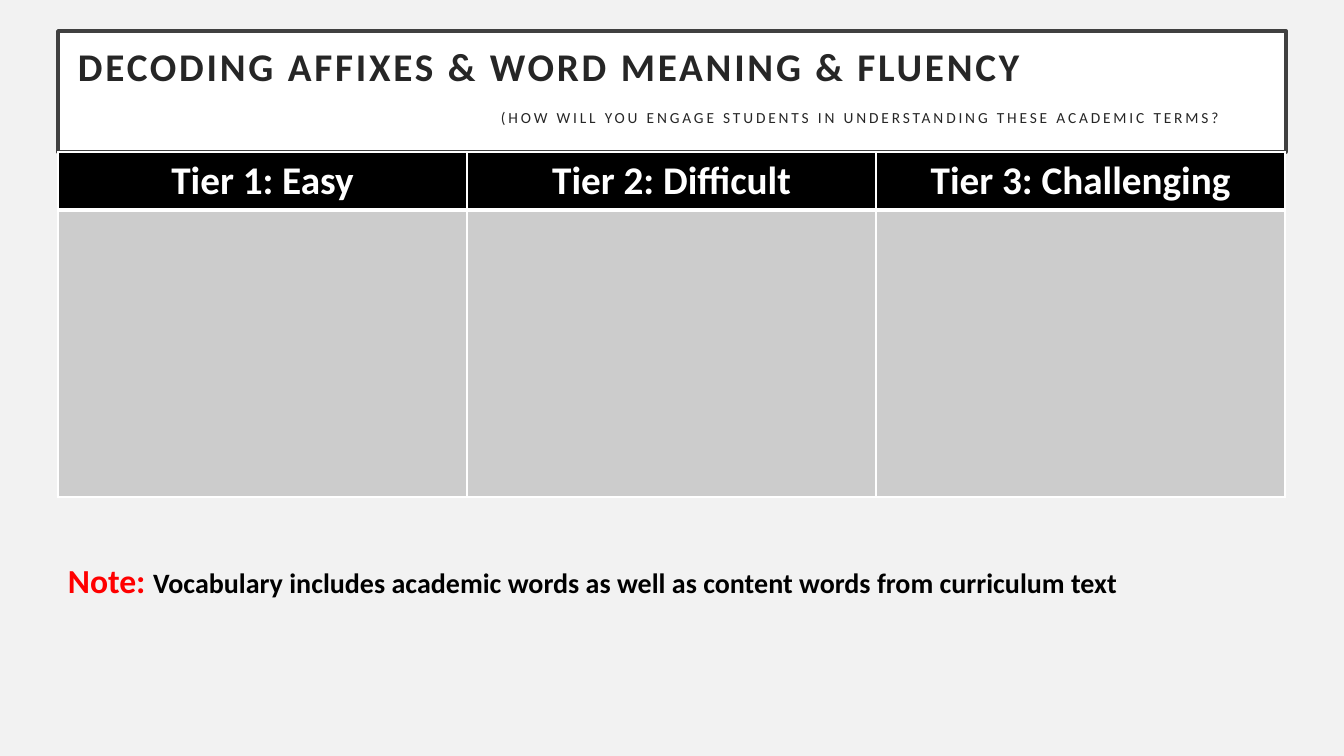
import dataclasses

import pptx
import pptx.dml.color
import pptx.enum.shapes
import pptx.enum.text
import pptx.oxml
import pptx.oxml.ns
import pptx.util


@dataclasses.dataclass(frozen=True)
class Theme:
    font: str = "Calibri"
    background: str = "F2F2F2"
    white: str = "FFFFFF"
    black: str = "000000"
    frame: str = "404040"
    heading: str = "262626"
    body: str = "CCCCCC"
    accent: str = "FF0000"
    heading_size: int = 28
    question_size: int = 11
    label_size: int = 24
    note_size: int = 20
    tracking: int = 2


def px(length):
    return pptx.util.Emu(round(length * 914400 / 100.8))


def rgb(value):
    return pptx.dml.color.RGBColor.from_string(value)


class SlideBuilder:
    def __init__(self, presentation, theme):
        self.theme = theme
        self.slide = presentation.slides.add_slide(presentation.slide_layouts[6])
        self.paint(self.slide.background.fill, theme.background)

    def paint(self, fill, color):
        fill.solid()
        fill.fore_color.rgb = rgb(color)

    def style(self, font, size, color, bold=True):
        font.name = self.theme.font
        font.size = pptx.util.Pt(size)
        font.bold = bold
        font.color.rgb = rgb(color)

    def banner(self, left, top, width, height, title, question):
        theme = self.theme
        banner = self.slide.shapes.add_shape(
            pptx.enum.shapes.MSO_SHAPE.RECTANGLE,
            px(left), px(top), px(width), px(height))
        banner.shadow.inherit = False
        self.paint(banner.fill, theme.white)
        banner.line.color.rgb = rgb(theme.frame)
        banner.line.width = pptx.util.Pt(2.5)
        frame = banner.text_frame
        frame.word_wrap = True
        frame.vertical_anchor = pptx.enum.text.MSO_ANCHOR.TOP
        frame.margin_left = frame.margin_right = px(20)
        frame.margin_top = px(17)
        frame.margin_bottom = 0
        heading, prompt = frame.paragraphs[0], frame.add_paragraph()
        for paragraph, text, size, bold in (
                (heading, title, theme.heading_size, True),
                (prompt, question, theme.question_size, False)):
            paragraph.alignment = pptx.enum.text.PP_ALIGN.LEFT
            paragraph.line_spacing = 0.9
            run = paragraph.add_run()
            run.text = text
            self.style(paragraph.font, size, theme.heading, bold)
            run.font._element.set("spc", str(theme.tracking * 100))
        prompt.space_before = pptx.util.Pt(14.5)
        prompt._p.get_or_add_pPr().set("marL", str(px(423)))

    def borders(self, cell, bottom):
        properties = cell._tc.get_or_add_tcPr()
        widths = {"lnL": 1, "lnR": 1, "lnT": 1, "lnB": bottom}
        for position, (side, width) in enumerate(widths.items()):
            properties.insert(position, pptx.oxml.parse_xml(
                f'<a:{side} {pptx.oxml.ns.nsdecls("a")} w="{pptx.util.Pt(width)}">'
                f'<a:solidFill><a:srgbClr val="{self.theme.white}"/></a:solidFill>'
                f'</a:{side}>'))

    def tiers(self, left, top, column_width, row_heights, names):
        theme = self.theme
        table = self.slide.shapes.add_table(
            len(row_heights), len(names), px(left), px(top),
            px(column_width * len(names)), px(sum(row_heights))).table
        table.horz_banding = False
        for row, height in zip(table.rows, row_heights):
            row.height = px(height)
        for index, name in enumerate(names):
            table.columns[index].width = px(column_width)
            header, body = table.cell(0, index), table.cell(1, index)
            self.paint(header.fill, theme.black)
            self.paint(body.fill, theme.body)
            self.borders(header, 3)
            self.borders(body, 1)
            header.text = name
            paragraph = header.text_frame.paragraphs[0]
            paragraph.alignment = pptx.enum.text.PP_ALIGN.CENTER
            self.style(paragraph.font, theme.heading_size, theme.white)

    def note(self, left, top, width, height, label, message):
        theme = self.theme
        frame = self.slide.shapes.add_textbox(
            px(left), px(top), px(width), px(height)).text_frame
        frame.word_wrap = True
        paragraph = frame.paragraphs[0]
        for text, size, color in ((label, theme.label_size, theme.accent),
                                  (message, theme.note_size, theme.black)):
            run = paragraph.add_run()
            run.text = text
            self.style(run.font, size, color)


def main():
    presentation = pptx.Presentation()
    presentation.slide_width = px(1344)
    presentation.slide_height = px(756)
    vocabulary = SlideBuilder(presentation, Theme())
    vocabulary.banner(
        58, 31, 1228, 121, "DECODING AFFIXES & WORD MEANING & FLUENCY",
        "(HOW WILL YOU ENGAGE STUDENTS IN UNDERSTANDING THESE ACADEMIC TERMS?")
    vocabulary.tiers(58, 152, 409, (58, 287),
                     ("Tier 1: Easy", "Tier 2: Difficult", "Tier 3: Challenging"))
    vocabulary.note(
        58, 555, 1210, 51, "Note: ",
        "Vocabulary includes academic words as well as content words from curriculum text")
    presentation.save("out.pptx")


if __name__ == "__main__":
    main()
